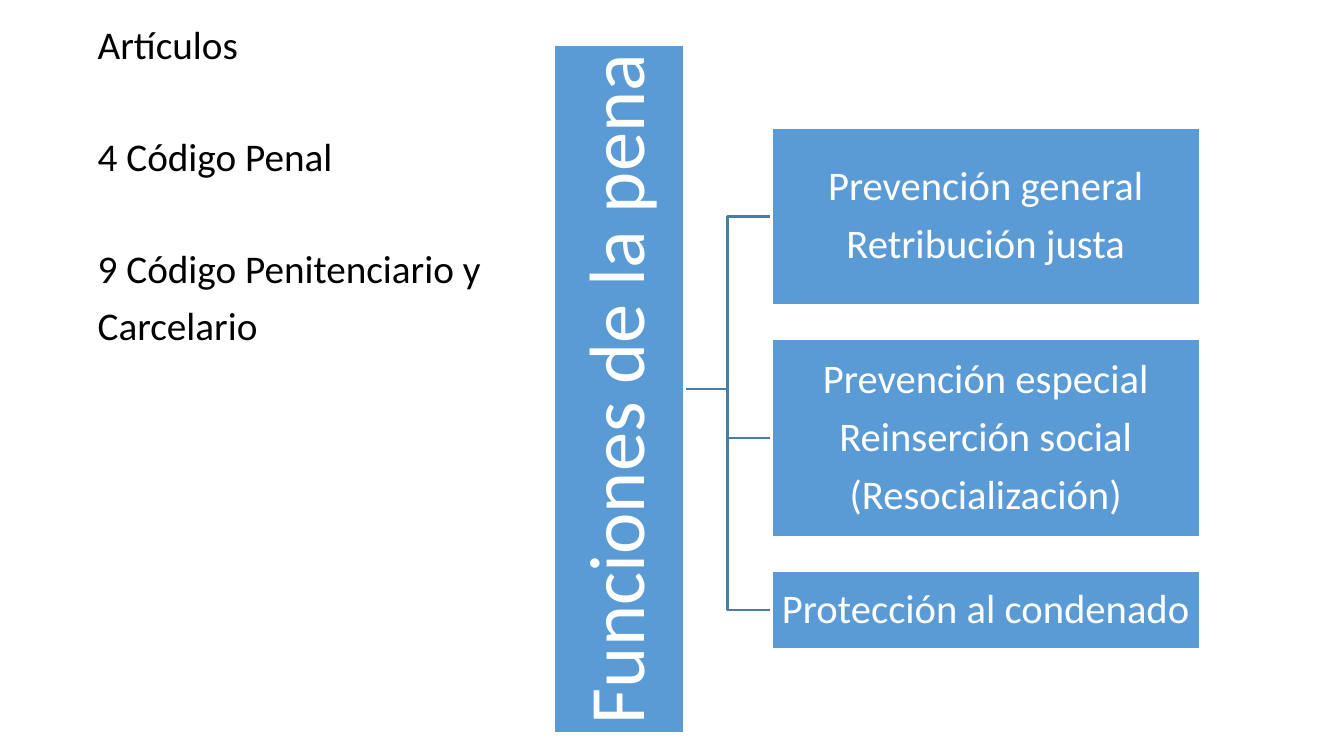
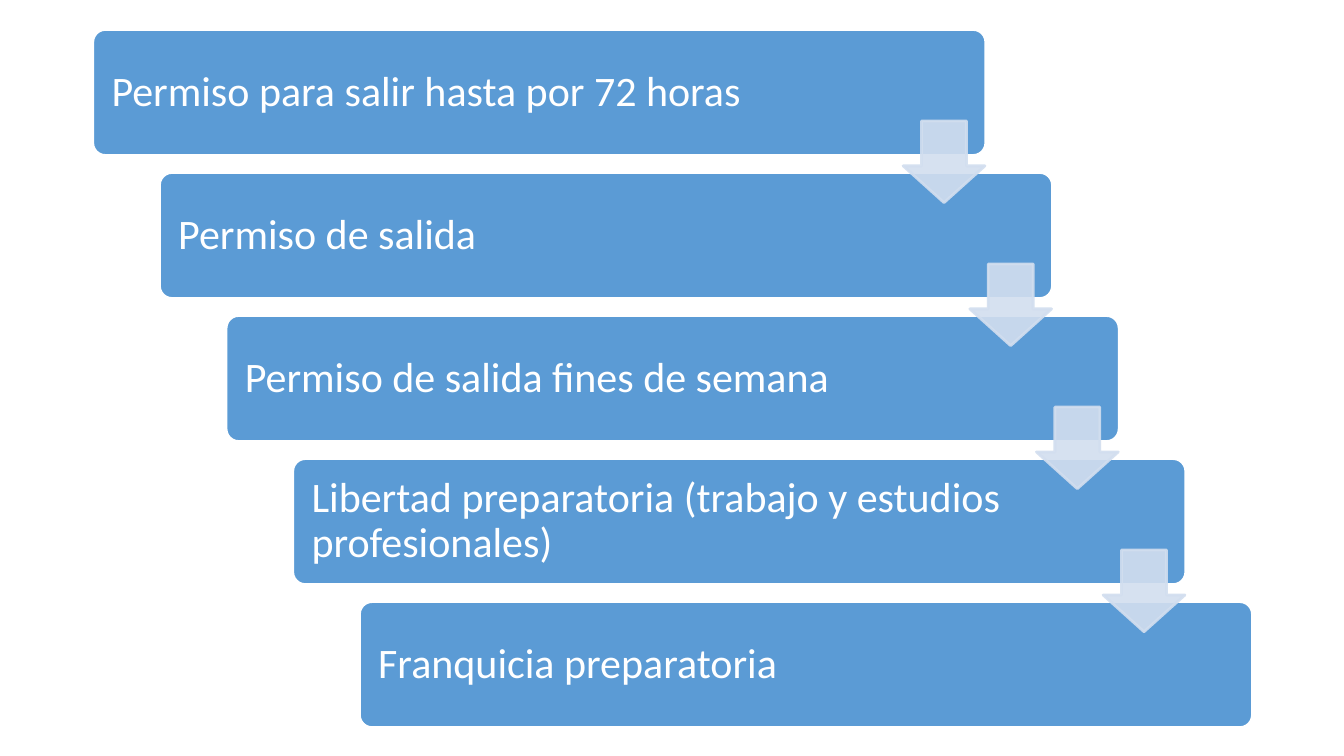
from lxml.etree import SubElement
from pptx import Presentation
from pptx.dml.color import RGBColor
from pptx.enum.shapes import MSO_CONNECTOR, MSO_SHAPE
from pptx.enum.text import MSO_ANCHOR, PP_ALIGN
from pptx.oxml.ns import qn
from pptx.util import Inches, Pt

# Shared look
WIDE, HIGH = Inches(13.33), Inches(7.5)
FONT = "Calibri"
HUES = {
    "ink": "000000",
    "white": "FFFFFF",
    "blue": "5B9BD5",
    "link": "497CAB",
    "pale": "D2DEEF",
}
EDGE = Pt(2)


def hue(name):
    return RGBColor.from_string(HUES[name])


def place(left, top, width, height):
    """Turn percent shares of the slide into lengths."""
    return (int(WIDE * left / 100), int(HIGH * top / 100),
            int(WIDE * width / 100), int(HIGH * height / 100))


def write(shape, lines, size, tint, align, gaps, pads):
    """Fill a shape with paragraphs; gaps are the points above each."""
    frame = shape.text_frame
    frame.word_wrap = True
    (frame.margin_left, frame.margin_top,
     frame.margin_right, frame.margin_bottom) = map(Inches, pads)
    frame.text = "\n".join(lines)
    for para, gap in zip(frame.paragraphs, gaps):
        para.alignment = align
        para.line_spacing = 0.9
        para.space_before = Pt(gap)
        para.font.name = FONT
        para.font.size = Pt(size)
        para.font.color.rgb = hue(tint)


def block(slide, kind, area, fill, edge, bends=()):
    """Draw a filled preset shape."""
    shape = slide.shapes.add_shape(kind, *place(*area))
    shape.shadow.inherit = False
    shape.fill.solid()
    shape.fill.fore_color.rgb = hue(fill)
    shape.line.color.rgb = hue(edge)
    shape.line.width = EDGE
    for spot, bend in enumerate(bends):
        shape.adjustments[spot] = bend
    return shape


def label(slide, kind, area, lines, size, align, pads, bends=()):
    """Draw a blue block with white text in it."""
    shape = block(slide, kind, area, "blue", "white", bends)
    gaps = [0] + [10] * (len(lines) - 1)
    write(shape, lines, size, "white", align, gaps, pads)
    shape.text_frame.vertical_anchor = MSO_ANCHOR.MIDDLE
    return shape


def branch(slide, start, end):
    """Draw an elbow link between two points."""
    line = slide.shapes.add_connector(
        MSO_CONNECTOR.ELBOW, *place(*start, *end))
    line.line.color.rgb = hue("link")
    line.line.width = EDGE
    SubElement(line._element.spPr, qn("a:effectLst"))
    return line


def arrow(slide, area):
    """Draw a pale, slightly clear down arrow."""
    shape = block(slide, MSO_SHAPE.DOWN_ARROW, area, "pale", "pale",
                  (0.55, 0.45))
    for tint in shape._element.spPr.iter(qn("a:srgbClr")):
        SubElement(tint, qn("a:alpha"), val="90000")


def aims(slide):
    # Articles of law
    note = slide.shapes.add_textbox(*place(6.53, 2.67, 86.6, 92))
    write(note,
          ["Artículos", "4 Código Penal", "9 Código Penitenciario y",
           "Carcelario"],
          28, "ink", PP_ALIGN.LEFT, [10, 50, 50, 10], (0.1, 0.05, 0.1, 0.05))

    # Rows of the tree, stacked with equal gaps
    groups = [
        (23.47, ["Prevención general", "Retribución justa"]),
        (26.4, ["Prevención especial", "Reinserción social",
                "(Resocialización)"]),
        (10.4, ["Protección al condenado"]),
    ]
    trunk = (41.18, 5.87, 9.75, 91.2)
    left, top, width, gap = 57.38, 16.93, 31.95, 4.35
    start = (trunk[0] + trunk[2], trunk[1] + trunk[3] / 2)
    rows = []
    for height, lines in groups:
        rows.append(((left, top, width, height), lines))
        top += height + gap

    # Links lie behind the blocks
    links = [branch(slide, start, (left, area[1] + area[3] / 2))
             for area, _ in rows]
    bar = label(slide, MSO_SHAPE.RECTANGLE, trunk, ["Funciones de la pena"],
                56, PP_ALIGN.CENTER, [0.04] * 4)
    bar.text_frame._txBody.bodyPr.set("vert", "vert270")
    for link, (area, lines) in zip(links, rows):
        box = label(slide, MSO_SHAPE.RECTANGLE, area, lines, 29,
                    PP_ALIGN.CENTER, [0.02] * 4)
        link.begin_connect(bar, 3)
        link.end_connect(box, 1)


def steps(slide):
    names = [
        "Permiso para salir hasta por 72 horas",
        "Permiso de salida",
        "Permiso de salida fines de semana",
        "Libertad preparatoria (trabajo y estudios profesionales)",
        "Franquicia preparatoria",
    ]
    right, down = 4.96, 18.92

    # Staircase of blocks
    for step, name in enumerate(names):
        area = (6.9 + step * right, 3.9 + step * down, 66.45, 16.67)
        label(slide, MSO_SHAPE.ROUNDED_RECTANGLE, area, [name], 30,
              PP_ALIGN.LEFT, (0.15, 0.15, 1.62, 0.15), (0.1,))

    # Arrows from each step to the next
    for step in range(len(names) - 1):
        arrow(slide, (67.2 + step * right, 16 + step * down, 6.08, 10.8))


def main():
    deck = Presentation()
    deck.slide_width, deck.slide_height = WIDE, HIGH
    for draw in (aims, steps):
        draw(deck.slides.add_slide(deck.slide_layouts[6]))
    deck.save("out.pptx")


if __name__ == "__main__":
    main()
